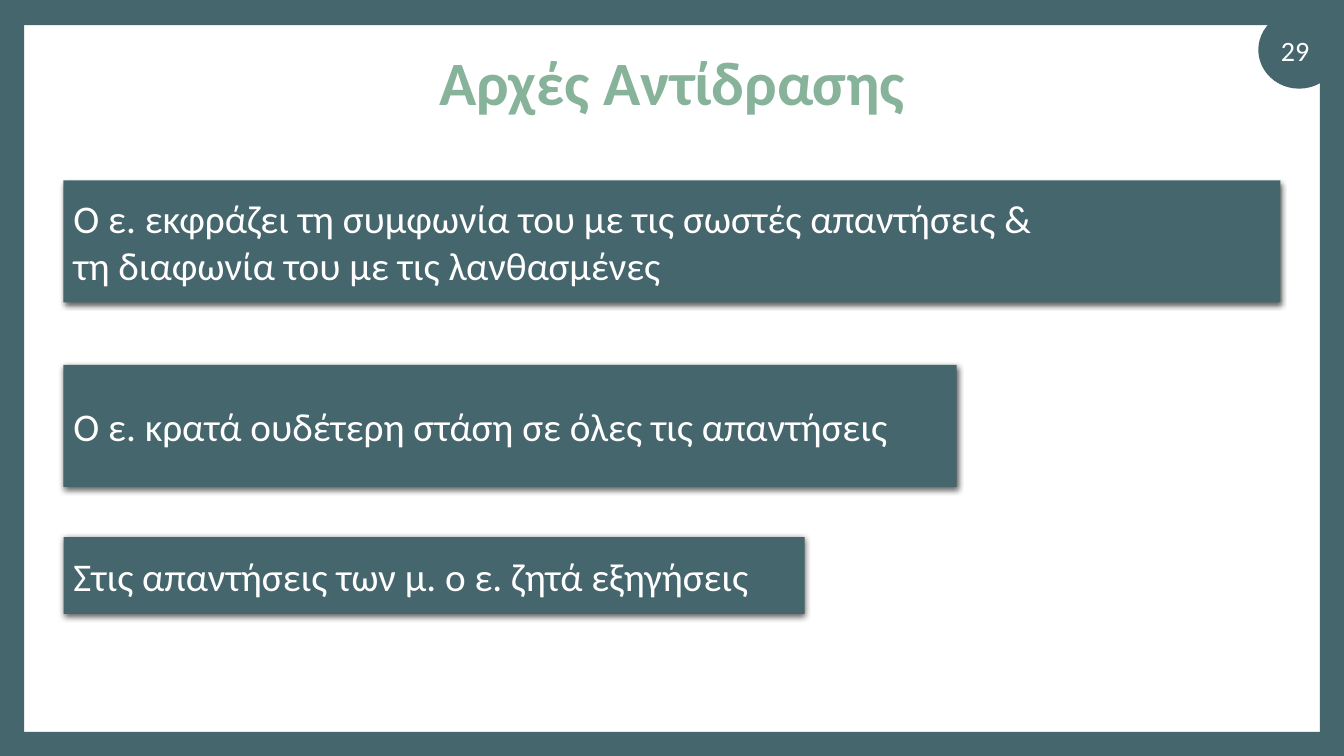
from lxml import etree
from pptx import Presentation
from pptx import util as u
from pptx.dml.color import RGBColor
from pptx.enum import shapes, text
from pptx.oxml.ns import qn

WIDE, HIGH = 13.33, 7.5
EDGE = 0.24


class Deck:
    hues = {"teal": "46666D", "green": "87B39A", "white": "FFFFFF", "black": "000000"}
    face = "Calibri"

    def __init__(self):
        self.prs = Presentation()
        self.prs.slide_width = u.Inches(WIDE)
        self.prs.slide_height = u.Inches(HIGH)
        self.slide = self.prs.slides.add_slide(self.prs.slide_layouts[6])
        fill = self.slide.background.fill
        fill.solid()
        fill.fore_color.rgb = self.hue("white")

    def hue(self, name):
        return RGBColor.from_string(self.hues[name])

    def shape(self, kind, *box):
        item = self.slide.shapes.add_shape(kind, *map(u.Inches, box))
        item.fill.solid()
        item.fill.fore_color.rgb = self.hue("teal")
        item.line.fill.background()
        item.shadow.inherit = False
        return item

    def letter(self, item, lines, size, hue="white", align="CENTER", bold=False, space=1.0):
        frame = item.text_frame
        frame.word_wrap = True
        frame.vertical_anchor = text.MSO_ANCHOR.MIDDLE
        frame.text = "\n".join(lines)
        for para in frame.paragraphs:
            para.alignment = text.PP_ALIGN[align]
            para.line_spacing = space
            para.font.name = self.face
            para.font.size = u.Pt(size)
            para.font.bold = bold
            para.font.color.rgb = self.hue(hue)

    def label(self, words, box, size, **style):
        item = self.slide.shapes.add_textbox(*map(u.Inches, box))
        self.letter(item, [words], size, **style)

    def shade(self, item):
        effects = item._element.spPr.find(qn("a:effectLst"))
        outer = etree.SubElement(
            effects, qn("a:outerShdw"), blurRad=str(u.Pt(4.5)),
            dist=str(u.Pt(1.5)), dir="5400000", algn="ctr", rotWithShape="0")
        tint = etree.SubElement(outer, qn("a:srgbClr"), val=self.hues["black"])
        etree.SubElement(tint, qn("a:alpha"), val="63000")

    def panel(self, lines, top, width, height):
        item = self.shape(shapes.MSO_SHAPE.RECTANGLE, 0.63, top, width, height)
        self.shade(item)
        self.letter(item, lines, 28, align="LEFT")

    def border(self):
        for box in ((0, 0, WIDE, 0.25), (0, HIGH - EDGE, WIDE, EDGE),
                    (0, 0, EDGE, HIGH), (WIDE - EDGE, 0, EDGE, HIGH)):
            self.shape(shapes.MSO_SHAPE.RECTANGLE, *box)


def main():
    deck = Deck()
    deck.shape(shapes.MSO_SHAPE.OVAL, 12.48, 0.11, 0.81, 0.77)
    deck.border()
    deck.label("Αρχές Αντίδρασης", (0.92, 0.4, 11.5, 0.89), 44,
               hue="green", bold=True, space=0.9)
    deck.label("29", (12.44, 0.3, 0.81, 0.4), 20)
    panels = [
        (["Ο ε. εκφράζει τη συμφωνία του με τις σωστές απαντήσεις &",
          "τη διαφωνία του με τις λανθασμένες"], 1.79, 12.07, 1.21),
        (["Ο ε. κρατά ουδέτερη στάση σε όλες τις απαντήσεις"], 3.62, 8.86, 1.21),
        (["Στις απαντήσεις των μ. ο ε. ζητά εξηγήσεις"], 5.33, 7.35, 0.76),
    ]
    for panel in panels:
        deck.panel(*panel)
    deck.prs.save("out.pptx")


if __name__ == "__main__":
    main()
